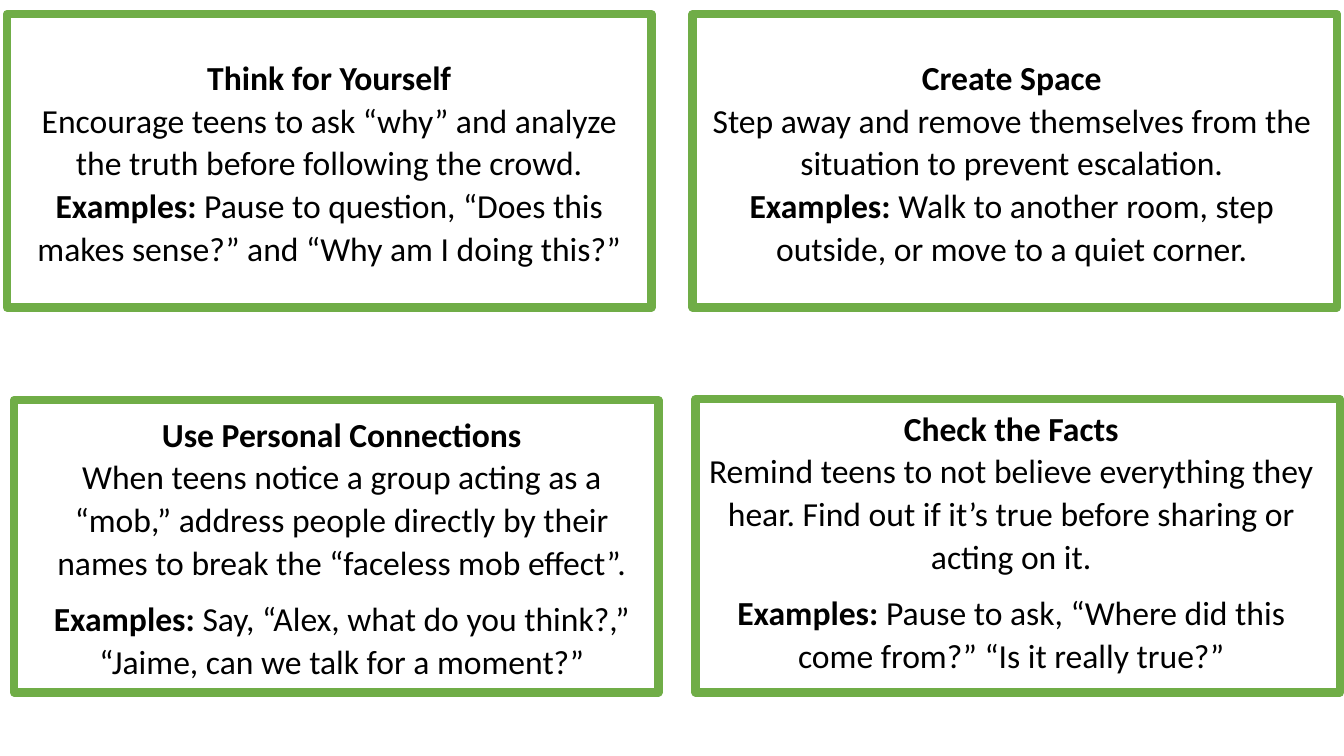
from pptx import Presentation
from pptx import util as u
from pptx.dml.color import RGBColor
from pptx.enum import shapes, text

CARDS = [
    ((0.07, 0.14, 6.39, 2.91), (0, 0.35, 6.39, 2.22), "Think for Yourself",
     "Encourage teens to ask “why” and analyze the truth before following the crowd.",
     " Pause to question, “Does this makes sense?” and “Why am I doing this?”", False),
    ((6.87, 0.14, 6.39, 2.91), (0, 0.35, 6.33, 2.22), "Create Space",
     "Step away and remove themselves from the situation to prevent escalation.",
     " Walk to another room, step outside, or move to a quiet corner.", False),
    ((0.14, 3.97, 6.39, 2.9), (0.12, 0.06, 6.26, 2.79), "Use Personal Connections",
     "When teens notice a group acting as a “mob,” address people directly by their "
     "names to break the “faceless mob effect”.",
     " Say, “Alex, what do you think?,” “Jaime, can we talk for a moment?”", True),
    ((6.9, 3.96, 6.39, 2.91), (0.03, 0.01, 6.2, 3.21), "Check the Facts",
     "Remind teens to not believe everything they hear. Find out if it’s true before "
     "sharing or acting on it.",
     " Pause to ask, “Where did this come from?” “Is it really true?”", True),
]


def color(code):
    """Turn a hex string into a colour."""
    return RGBColor.from_string(code)


def style(para):
    """Set the shared look of a card paragraph."""
    para.alignment = text.PP_ALIGN.CENTER
    para.line_spacing = 1.06
    para.space_after = u.Pt(10)
    para.font.size = u.Pt(24)
    para.font.name = "Calibri"
    para.font.color.rgb = color("000000")


def write(para, words, bold=False):
    """Add one run to a paragraph."""
    run = para.add_run()
    run.text = words
    run.font.bold = bold


def card(slide, box, inset, title, advice, example, split):
    """Draw a framed card with its title, advice and examples."""
    left, top, width, height = box
    frame = slide.shapes.add_shape(shapes.MSO_SHAPE.RECTANGLE, *map(u.Inches, box))
    frame.shadow.inherit = False
    frame.fill.solid()
    frame.fill.fore_color.rgb = color("FFFFFF")
    frame.line.color.rgb = color("70AD47")
    frame.line.width = u.Pt(6)

    dx, dy, wide, high = inset
    area = (left + dx, top + dy, wide, high)
    body = slide.shapes.add_textbox(*map(u.Inches, area)).text_frame
    body.word_wrap = True
    para = body.paragraphs[0]
    style(para)
    write(para, title, True)
    para.add_line_break()
    write(para, advice)
    if split:
        para = body.add_paragraph()
        style(para)
    else:
        para.add_line_break()
    write(para, "Examples:", True)
    write(para, example)


def main():
    """Build the slide and save it."""
    deck = Presentation()
    deck.slide_width, deck.slide_height = u.Inches(13.33), u.Inches(7.5)
    slide = deck.slides.add_slide(deck.slide_layouts[6])
    for item in CARDS:
        card(slide, *item)
    deck.save("out.pptx")


if __name__ == "__main__":
    main()
